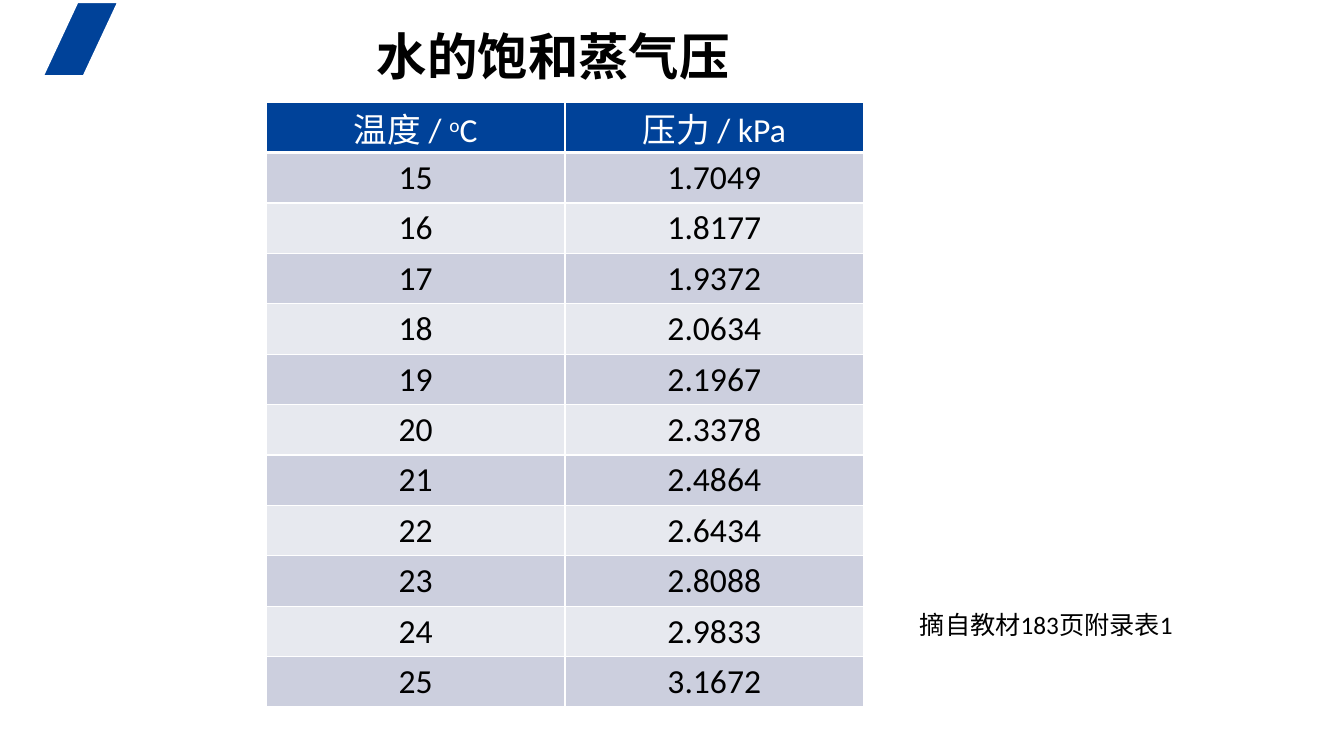
import pptx
import pptx.dml.color
import pptx.enum.shapes
import pptx.enum.text
import pptx.oxml
import pptx.oxml.ns
import pptx.util
from pptx.util import Pt

BLUE = pptx.dml.color.RGBColor(0x00, 0x42, 0x99)
WHITE = pptx.dml.color.RGBColor(0xFF, 0xFF, 0xFF)
BLACK = pptx.dml.color.RGBColor(0x00, 0x00, 0x00)
DARK_BAND = pptx.dml.color.RGBColor(0xCC, 0xCF, 0xDE)
LIGHT_BAND = pptx.dml.color.RGBColor(0xE7, 0xE9, 0xEF)
FONT = "Calibri"
ROW_HEIGHT = 36
FIRST_TEMPERATURE = 15
PRESSURES = ["1.7049", "1.8177", "1.9372", "2.0634", "2.1967", "2.3378",
             "2.4864", "2.6434", "2.8088", "2.9833", "3.1672"]
# Each header is a list of (text, is superscript) runs
HEADERS = [[("温度 / ", False), ("o", True), ("C", False)],
           [("压力 / kPa", False)]]


def style_paragraph(paragraph, size, color, bold=False, alignment=None):
    paragraph.alignment = alignment
    paragraph.font.name = FONT
    paragraph.font.size = Pt(size)
    paragraph.font.color.rgb = color
    paragraph.font.bold = bold


def fill_text_box(shape, text, size, bold=False):
    frame = shape.text_frame
    frame.text = text
    frame.word_wrap = True
    frame.vertical_anchor = pptx.enum.text.MSO_ANCHOR.MIDDLE
    frame.auto_size = pptx.enum.text.MSO_AUTO_SIZE.NONE
    style_paragraph(frame.paragraphs[0], size, BLACK, bold,
                    pptx.enum.text.PP_ALIGN.LEFT)


def add_title(slide, text):
    title = slide.shapes.title
    title.left, title.top, title.width, title.height = (
        Pt(262), Pt(13.7), Pt(269.5), Pt(51))
    fill_text_box(title, text, 36, bold=True)


def add_corner_mark(slide):
    mark = slide.shapes.add_shape(
        pptx.enum.shapes.MSO_SHAPE.PARALLELOGRAM,
        Pt(30.5), Pt(1.5), Pt(54), Pt(53))
    mark.adjustments[0] = 0.467
    mark.shadow.inherit = False
    mark.fill.solid()
    mark.fill.fore_color.rgb = BLUE
    mark.line.color.rgb = WHITE
    mark.line.width = Pt(1.5)


def set_borders(cell, widths):
    """Add white borders; widths maps a side (L, R, T, B) to points."""
    properties = cell._tc.get_or_add_tcPr()
    for position, (side, width) in enumerate(widths.items()):
        border = pptx.oxml.parse_xml(
            f'<a:ln{side} {pptx.oxml.ns.nsdecls("a")} w="{Pt(width)}">'
            f'<a:solidFill><a:srgbClr val="{WHITE}"/></a:solidFill></a:ln{side}>')
        properties.insert(position, border)


def format_cell(cell, runs, fill, color, top=1, bottom=1):
    paragraph = cell.text_frame.paragraphs[0]
    for text, superscript in runs:
        run = paragraph.add_run()
        run.text = text
        if superscript:
            run.font._element.set("baseline", "30000")
    style_paragraph(paragraph, 24, color,
                    alignment=pptx.enum.text.PP_ALIGN.CENTER)
    cell.fill.solid()
    cell.fill.fore_color.rgb = fill
    set_borders(cell, {"L": 1, "R": 1, "T": top, "B": bottom})


def add_pressure_table(slide):
    row_count = len(PRESSURES) + 1
    table = slide.shapes.add_table(
        row_count, len(HEADERS), Pt(190.3), Pt(73),
        Pt(426.6), Pt(row_count * ROW_HEIGHT)).table
    # Header row
    for column, runs in enumerate(HEADERS):
        cell = table.cell(0, column)
        format_cell(cell, runs, BLUE, WHITE, bottom=3)
        cell.margin_top, cell.margin_bottom = Pt(1.2), Pt(0)
    # Banded value rows
    for row, pressure in enumerate(PRESSURES, start=1):
        fill = DARK_BAND if row % 2 else LIGHT_BAND
        temperature = str(FIRST_TEMPERATURE + row - 1)
        for column, text in enumerate([temperature, pressure]):
            cell = table.cell(row, column)
            format_cell(cell, [(text, False)], fill, BLACK,
                        top=3 if row == 1 else 1)
            cell.margin_top, cell.margin_bottom = Pt(3.6), Pt(3)


def add_source_note(slide, text):
    note = slide.shapes.add_textbox(Pt(650), Pt(431.5), Pt(209), Pt(29))
    fill_text_box(note, text, 18)


def main():
    presentation = pptx.Presentation()
    presentation.slide_width = Pt(960)
    presentation.slide_height = Pt(540)
    slide = presentation.slides.add_slide(presentation.slide_layouts[5])
    add_corner_mark(slide)
    add_title(slide, "水的饱和蒸气压")
    add_pressure_table(slide)
    add_source_note(slide, "摘自教材183页附录表1")
    presentation.save("out.pptx")


if __name__ == "__main__":
    main()
